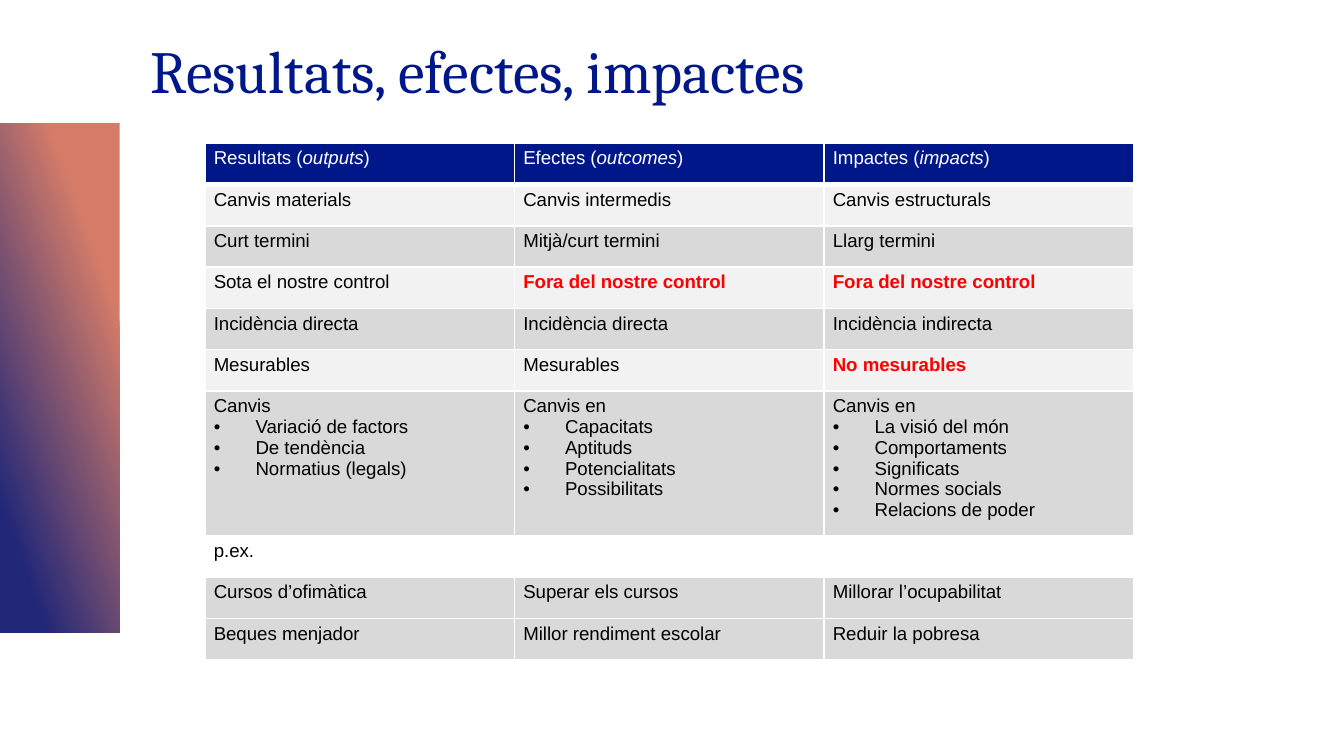
import pptx
import pptx.dml.color
import pptx.enum.shapes
import pptx.enum.text
import pptx.oxml.ns
import pptx.util
import lxml.etree

Cm = pptx.util.Cm
Pt = pptx.util.Pt

COLORS = {
    "navy": "001789",
    "white": "FFFFFF",
    "black": "000000",
    "red": "FF0000",
    "light": "F2F2F2",
    "grey": "D9D9D9",
    "coral": "D47C68",
    "indigo": "222778",
}

HEADERS = [("Resultats", "outputs"), ("Efectes", "outcomes"), ("Impactes", "impacts")]
ROWS = [
    ("light", ["Canvis materials", "Canvis intermedis", "Canvis estructurals"]),
    ("grey", ["Curt termini", "Mitjà/curt termini", "Llarg termini"]),
    ("light", ["Sota el nostre control", "Fora del nostre control", "Fora del nostre control"]),
    ("grey", ["Incidència directa", "Incidència directa", "Incidència indirecta"]),
    ("light", ["Mesurables", "Mesurables", "No mesurables"]),
    ("grey", [
        "Canvis\nVariació de factors\nDe tendència\nNormatius (legals)",
        "Canvis en\nCapacitats\nAptituds\nPotencialitats\nPossibilitats",
        "Canvis en\nLa visió del món\nComportaments\nSignificats\nNormes socials\nRelacions de poder",
    ]),
    (None, ["p.ex.", "", ""]),
    ("grey", ["Cursos d’ofimàtica", "Superar els cursos", "Millorar l’ocupabilitat"]),
    ("grey", ["Beques menjador", "Millor rendiment escolar", "Reduir la pobresa"]),
]
ALERTS = {"Fora del nostre control", "No mesurables"}


def rgb(name):
    return pptx.dml.color.RGBColor.from_string(COLORS[name])


def add_element(parent, tag, **attributes):
    return lxml.etree.SubElement(parent, pptx.oxml.ns.qn(tag), attributes)


class SlideBuilder:
    title_font = "Cambria"
    body_font = "Arial"
    body_size = 10

    def __init__(self, presentation):
        self.slide = presentation.slides.add_slide(presentation.slide_layouts[5])

    def format_run(self, run, font, size, color, bold=False, italic=False):
        run.font.name = font
        run.font.size = Pt(size)
        run.font.color.rgb = rgb(color)
        run.font.bold = bold
        run.font.italic = italic

    def title(self, text, left, top, width, height):
        shape = self.slide.shapes.title
        shape.left, shape.top, shape.width, shape.height = map(Cm, (left, top, width, height))
        text_frame = shape.text_frame
        text_frame.text = text
        text_frame.auto_size = pptx.enum.text.MSO_AUTO_SIZE.NONE
        text_frame.vertical_anchor = pptx.enum.text.MSO_ANCHOR.BOTTOM
        paragraph = text_frame.paragraphs[0]
        paragraph.alignment = pptx.enum.text.PP_ALIGN.LEFT
        paragraph.line_spacing = 0.9
        self.format_run(paragraph.runs[0], self.title_font, 32, "navy")

    def gradient_band(self, left, top, width, height):
        shape = self.slide.shapes.add_shape(
            pptx.enum.shapes.MSO_SHAPE.RECTANGLE, Cm(left), Cm(top), Cm(width), Cm(height))
        shape.shadow.inherit = False
        shape.line.fill.background()
        shape.rotation = 90
        shape._element.spPr.xfrm.set("flipV", "1")
        shape.fill.gradient()
        shape.fill.gradient_angle = 70
        stops = [(0.23, "coral"), (0.85, "indigo")]
        for stop, (position, color) in zip(shape.fill.gradient_stops, stops):
            stop.position = position
            stop.color.rgb = rgb(color)

    def table(self, left, top, column_width, row_heights):
        columns = len(HEADERS)
        table = self.slide.shapes.add_table(
            len(row_heights), columns, Cm(left), Cm(top),
            Cm(column_width * columns), Cm(sum(row_heights))).table
        table.first_row = False
        table.horz_banding = False
        for column in table.columns:
            column.width = Cm(column_width)
        for row, height in zip(table.rows, row_heights):
            row.height = Cm(height)
        for index, (name, term) in enumerate(HEADERS):
            cell = table.cell(0, index)
            self.style_cell(cell, "navy", bottom=3)
            paragraph = cell.text_frame.paragraphs[0]
            for text, italic in ((f"{name} (", False), (term, True), (")", False)):
                run = paragraph.add_run()
                run.text = text
                self.format_run(run, self.body_font, self.body_size, "white", italic=italic)
        for row_index, (fill, texts) in enumerate(ROWS, 1):
            for column_index, text in enumerate(texts):
                cell = table.cell(row_index, column_index)
                self.style_cell(cell, fill, top=3 if row_index == 1 else 1)
                self.fill_text(cell, text)

    def style_cell(self, cell, fill, top=1, bottom=1):
        cell.margin_left = cell.margin_right = Cm(0.17)
        cell.margin_top = cell.margin_bottom = Cm(0.09)
        properties = cell._tc.get_or_add_tcPr()
        for side, width in (("L", 1), ("R", 1), ("T", top), ("B", bottom)):
            line = add_element(properties, f"a:ln{side}", w=str(Pt(width)))
            add_element(add_element(line, "a:solidFill"), "a:srgbClr", val=COLORS["white"])
        if fill:
            cell.fill.solid()
            cell.fill.fore_color.rgb = rgb(fill)
        else:
            cell.fill.background()

    def fill_text(self, cell, text):
        alert = text in ALERTS
        cell.text_frame.text = text
        for index, paragraph in enumerate(cell.text_frame.paragraphs):
            if index:
                self.bullet(paragraph)
            if not paragraph.runs:
                add_element(paragraph._p, "a:endParaRPr", sz=str(self.body_size * 100))
            for run in paragraph.runs:
                self.format_run(run, self.body_font, self.body_size,
                                "red" if alert else "black", bold=alert)

    def bullet(self, paragraph):
        properties = paragraph._p.get_or_add_pPr()
        indent = Cm(0.79)
        properties.set("marL", str(indent))
        properties.set("indent", str(-indent))
        add_element(properties, "a:buFont", typeface=self.body_font)
        add_element(properties, "a:buChar", char="•")


def main():
    presentation = pptx.Presentation()
    presentation.slide_width = Cm(25.4)
    presentation.slide_height = Cm(14.29)
    builder = SlideBuilder(presentation)
    builder.gradient_band(-3.68, 6.02, 9.63, 2.26)
    builder.title("Resultats, efectes, impactes", 2.59, 0.64, 21.13, 1.5)
    builder.table(3.87, 2.71, 5.85, [0.78] * 6 + [2.74] + [0.78] * 3)
    presentation.save("out.pptx")


if __name__ == "__main__":
    main()
